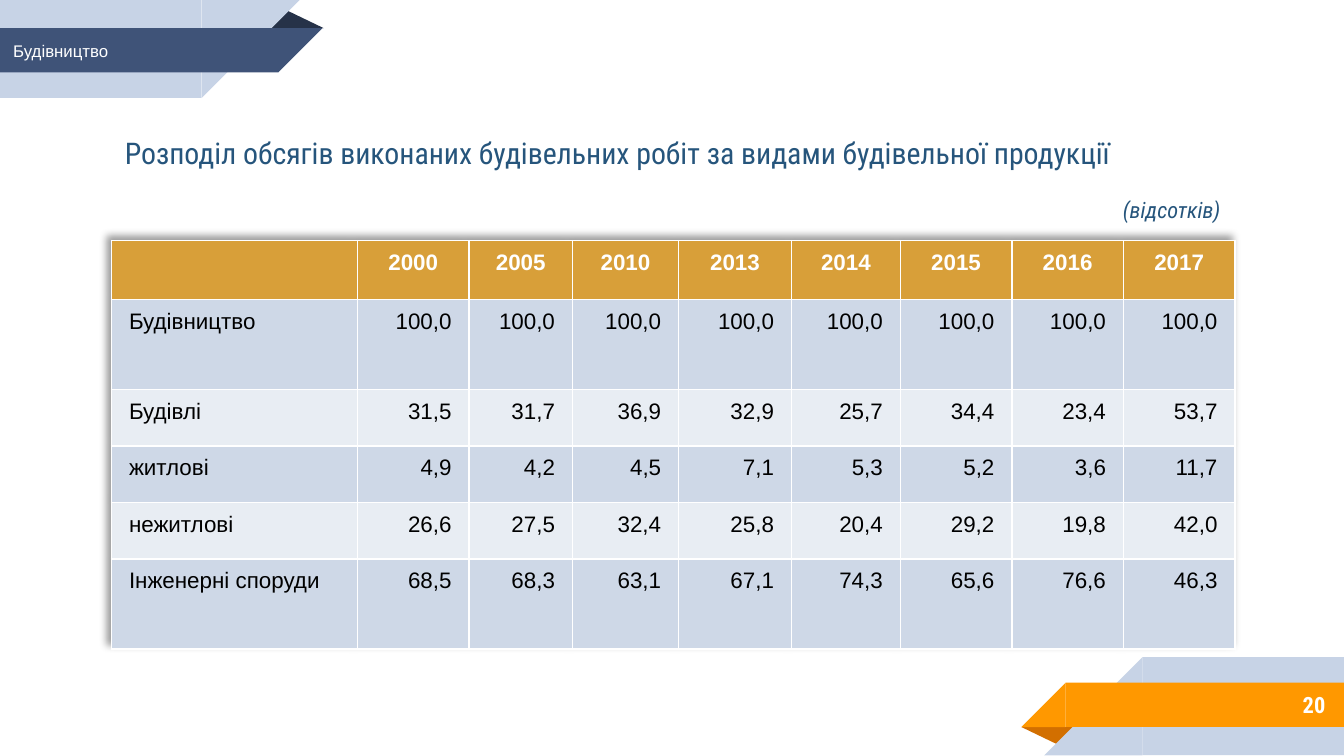
from lxml import etree
from pptx import Presentation
from pptx.dml.color import RGBColor
from pptx.enum.shapes import MSO_SHAPE
from pptx.enum.text import MSO_ANCHOR, PP_ALIGN
from pptx.oxml.ns import qn
from pptx.util import Inches, Pt

RECT = MSO_SHAPE.RECTANGLE
CORNER = MSO_SHAPE.RIGHT_TRIANGLE
FOLD = MSO_SHAPE.ISOSCELES_TRIANGLE
MIDDLE = MSO_ANCHOR.MIDDLE
LEFT, CENTER, RIGHT = PP_ALIGN.LEFT, PP_ALIGN.CENTER, PP_ALIGN.RIGHT

CELL = Inches(0.01)
COLS, ROWS = 1000, 562.5  # slide grid

PALE, NAVY, ORANGE = "C7D3E6", "3F5378", "FF9800"
WHITE, BLACK, BLUE, GOLD = "FFFFFF", "000000", "26557C", "D89F39"
BANDS = "CED8E7", "E8EDF3"
SANS, NARROW = "Arial", "Roboto Condensed"

WIDTHS = [183, 83, 77, 79, 84, 81, 83, 83, 83]
HEIGHTS = [42, 67, 42, 42, 42, 67]
DATA = [
    ["", "2000", "2005", "2010", "2013", "2014", "2015", "2016", "2017"],
    ["Будівництво"] + ["100,0"] * 8,
    ["Будівлі", "31,5", "31,7", "36,9", "32,9", "25,7", "34,4", "23,4", "53,7"],
    ["житлові", "4,9", "4,2", "4,5", "7,1", "5,3", "5,2", "3,6", "11,7"],
    ["нежитлові", "26,6", "27,5", "32,4", "25,8", "20,4", "29,2", "19,8", "42,0"],
    ["Інженерні споруди", "68,5", "68,3", "63,1", "67,1", "74,3", "65,6", "76,6", "46,3"],
]


def color(code):
    return RGBColor.from_string(code)


def grid(*cells):
    """Turn grid cells into slide lengths."""
    return [int(cell * CELL) for cell in cells]


def paint(item, code):
    item.fill.solid()
    item.fill.fore_color.rgb = color(code)


def shape(slide, kind, box, code, turn=0):
    item = slide.shapes.add_shape(kind, *grid(*box))
    item.shadow.inherit = False
    item.line.fill.background()
    item.rotation = turn
    paint(item, code)
    return item


def fold(slide, left, top, code, turn=0):
    item = shape(slide, FOLD, (left, top, 43, 14), code, turn)
    item.adjustments[0] = 0.324


def band(slide, top, length, height, code, right=False):
    """Draw a bar from the slide's edge with a slanted end."""
    start = COLS - length if right else 0
    tip = start - height if right else length
    shape(slide, RECT, (start, top, length, height), code)
    shape(slide, CORNER, (tip, top, height, height), code, 270 if right else 90)


def write(para, text, align, look):
    para.alignment = align
    font = para.add_run().font
    para.runs[0].text = text
    font.color.rgb = color(look["color"])
    for name, value in look.items():
        if name != "color":
            setattr(font, name, value)


def label(slide, box, lines, **frame):
    """Add a text box; each line is text, alignment, font and space before."""
    body = slide.shapes.add_textbox(*grid(*box)).text_frame
    for name, value in ({"word_wrap": True} | frame).items():
        setattr(body, name, value)
    for i, (text, align, look, gap) in enumerate(lines):
        para = body.add_paragraph() if i else body.paragraphs[0]
        para.space_before = Pt(gap)
        write(para, text, align, look)


def shade(table):
    """Cast a soft shadow up and to the left."""
    effects = etree.Element(qn("a:effectLst"))
    cast = etree.SubElement(effects, qn("a:outerShdw"), blurRad="50800",
                            dist="38100", dir="13500000", algn="br", rotWithShape="0")
    black = etree.SubElement(cast, qn("a:prstClr"), val="black")
    etree.SubElement(black, qn("a:alpha"), val="40000")
    table._tbl.tblPr.insert(0, effects)


def chart_table(slide, left, top):
    box = grid(left, top, sum(WIDTHS), sum(HEIGHTS))
    table = slide.shapes.add_table(len(HEIGHTS), len(WIDTHS), *box).table
    shade(table)
    for col, width in zip(table.columns, WIDTHS):
        col.width = grid(width)[0]
    for r, (row, height) in enumerate(zip(table.rows, HEIGHTS)):
        row.height = grid(height)[0]
        look = {"name": SANS, "size": Pt(12), "bold": r == 0,
                "color": BLACK if r else WHITE}
        for c, cell in enumerate(row.cells):
            paint(cell, BANDS[(r - 1) % 2] if r else GOLD)
            cell.margin_left = cell.margin_right = Inches(0.13)
            cell.margin_top = cell.margin_bottom = Inches(0.07)
            align = CENTER if r == 0 else RIGHT if c else LEFT
            if DATA[r][c]:
                write(cell.text_frame.paragraphs[0], DATA[r][c], align, look)


def main():
    deck = Presentation()
    deck.slide_width, deck.slide_height = grid(COLS, ROWS)
    slide = deck.slides.add_slide(deck.slide_layouts[6])

    fold(slide, 760, 541, "D26F00", 180)
    band(slide, 489, 150, 73, PALE, right=True)
    band(slide, 508, 207, 33, ORANGE, right=True)
    fold(slide, 198, 7, "263248")
    band(slide, 0, 150, 73, PALE)
    band(slide, 21, 207, 33, NAVY)

    number = {"name": NARROW, "size": Pt(12), "bold": True, "color": WHITE}
    topic = {"name": SANS, "size": Pt(9), "color": WHITE}
    title = {"name": NARROW, "size": Pt(16), "color": BLUE}
    unit = title | {"size": Pt(12), "italic": True}
    label(slide, (833, 507, 163, 35), [("20", RIGHT, number, 0)],
          vertical_anchor=MIDDLE)
    label(slide, (0, 25, 92, 25), [("Будівництво", LEFT, topic, 0)],
          word_wrap=False)
    label(slide, (83, 95, 835, 77), [
        ("Розподіл обсягів виконаних будівельних робіт за видами будівельної продукції",
         LEFT, title, 0),
        ("(відсотків)", RIGHT, unit, 14),
    ])
    chart_table(slide, 83, 179)
    deck.save("out.pptx")


if __name__ == "__main__":
    main()
